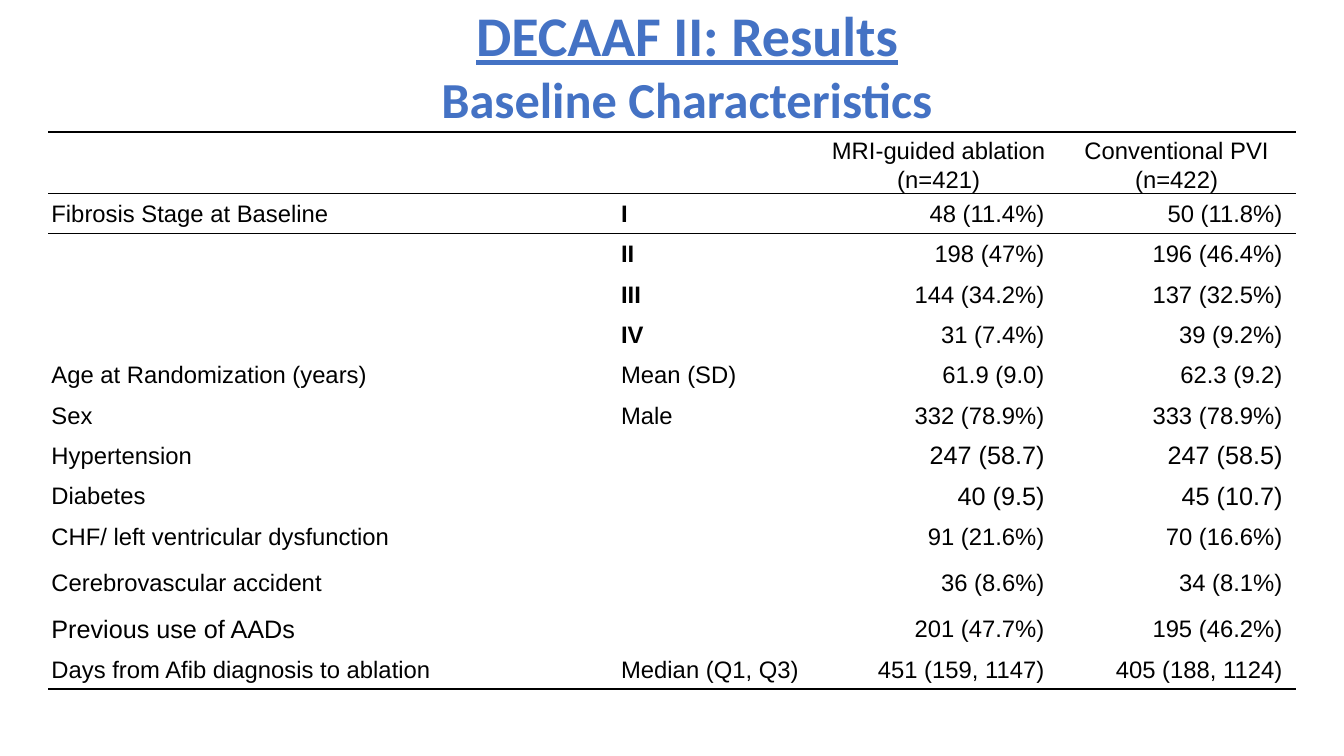
from lxml import etree
from pptx import Presentation
from pptx import util as u
from pptx.dml.color import RGBColor
from pptx.enum import text
from pptx.oxml.ns import qn

PX = 9144
PLAIN = "{2D5ABB26-0587-4C30-8999-92F81FD0307C}"
COLS = [565, 200, 236, 236]
ROWS = [
    ("", "", "MRI-guided ablation\n(n=421)", "Conventional PVI\n(n=422)"),
    ("Fibrosis Stage at Baseline", "I", "48 (11.4%)", "50 (11.8%)"),
    ("", "II", "198 (47%)", "196 (46.4%)"),
    ("", "III", "144 (34.2%)", "137 (32.5%)"),
    ("", "IV", "31 (7.4%)", "39 (9.2%)"),
    ("Age at Randomization (years)", "Mean (SD)", "61.9 (9.0)", "62.3 (9.2)"),
    ("Sex", "Male", "332 (78.9%)", "333 (78.9%)"),
    ("Hypertension", "", "247 (58.7)", "247 (58.5)"),
    ("Diabetes", "", "40 (9.5)", "45 (10.7)"),
    ("CHF/ left ventricular dysfunction", "", "91 (21.6%)", "70 (16.6%)"),
    ("Cerebrovascular accident", "", "36 (8.6%)", "34 (8.1%)"),
    ("Previous use of AADs", "", "201 (47.7%)", "195 (46.2%)"),
    ("Days from Afib diagnosis to ablation", "Median (Q1, Q3)",
     "451 (159, 1147)", "405 (188, 1124)"),
]
TALL = {0: 56, 10: 52}
LARGE = {(7, 2), (7, 3), (8, 2), (8, 3), (11, 0)}
STAGES = range(1, 5)


def px(n):
    return u.Emu(n * PX)


def color(code):
    return RGBColor.from_string(code)


class Deck:
    ink, paper, accent = "000000", "FFFFFF", "4472C4"
    body, head = "Arial", "Calibri"

    def __init__(self, wide, high):
        self.file = Presentation()
        self.file.slide_width, self.file.slide_height = px(wide), px(high)
        self.slide = self.file.slides.add_slide(self.file.slide_layouts[5])

    def style(self, para, face, size, tint, bold=False, line=False):
        for font in [para.font] + [run.font for run in para.runs]:
            font.name, font.size, font.bold = face, u.Pt(size), bold
            font.underline = line
            font.color.rgb = color(tint)

    def title(self, box, lines):
        shape = self.slide.shapes.title
        shape.left, shape.top, shape.width, shape.height = map(px, box)
        frame = shape.text_frame
        frame.text = "\n".join(words for words, size, line in lines)
        frame.word_wrap = False
        frame.auto_size = text.MSO_AUTO_SIZE.SHAPE_TO_FIT_TEXT
        frame.vertical_anchor = text.MSO_ANCHOR.TOP
        for para, (words, size, line) in zip(frame.paragraphs, lines):
            para.alignment = text.PP_ALIGN.CENTER
            para.line_spacing = 1.0
            self.style(para, self.head, size, self.accent, True, line)

    def rule(self, cell, side):
        props = cell._tc.get_or_add_tcPr()
        edge = etree.SubElement(props, qn("a:ln" + side), w=str(u.Pt(1)))
        fill = etree.SubElement(edge, qn("a:solidFill"))
        etree.SubElement(fill, qn("a:srgbClr"), val=self.ink)

    def cell(self, cell, words, size, bold, align, anchor, right, sides):
        for side in sides:
            self.rule(cell, side)
        cell.fill.solid()
        cell.fill.fore_color.rgb = color(self.paper)
        cell.margin_left, cell.margin_right = px(3), px(right)
        cell.margin_top = cell.margin_bottom = 0
        cell.vertical_anchor = anchor
        para = cell.text_frame.paragraphs[0]
        para.text = words
        para.alignment = align
        para.line_spacing, para.space_after = 1.07, u.Pt(2.5)
        self.style(para, self.body, size, self.ink, bold)

    def table(self, left, top):
        highs = [TALL.get(r, 40) for r in range(len(ROWS))]
        frame = self.slide.shapes.add_table(
            len(ROWS), len(COLS), px(left), px(top), px(sum(COLS)), px(sum(highs)))
        grid = frame.table
        grid.first_row = grid.horz_banding = False
        grid._tbl.tblPr.find(qn("a:tableStyleId")).text = PLAIN
        for col, wide in zip(grid.columns, COLS):
            col.width = px(wide)
        for row, high in zip(grid.rows, highs):
            row.height = px(high)
        edges = {0: "TB", 1: "T", len(ROWS) - 1: "B"}
        for r, row in enumerate(ROWS):
            for c, words in enumerate(row):
                align, right = text.PP_ALIGN.LEFT, 3
                anchor = text.MSO_ANCHOR.MIDDLE
                if r == 0:
                    align, anchor = text.PP_ALIGN.CENTER, text.MSO_ANCHOR.BOTTOM
                elif c > 1:
                    align, right = text.PP_ALIGN.RIGHT, 13
                size = 18 if (r, c) in LARGE else 17
                self.cell(grid.cell(r, c), words, size, c == 1 and r in STAGES,
                          align, anchor, right, edges.get(r, ""))


def main():
    deck = Deck(1333, 750)
    deck.title((425, -4, 513, 138), [("DECAAF II: Results", 40, True),
                                     ("Baseline Characteristics", 36, False)])
    deck.table(48, 131)
    deck.file.save("out.pptx")


if __name__ == "__main__":
    main()
